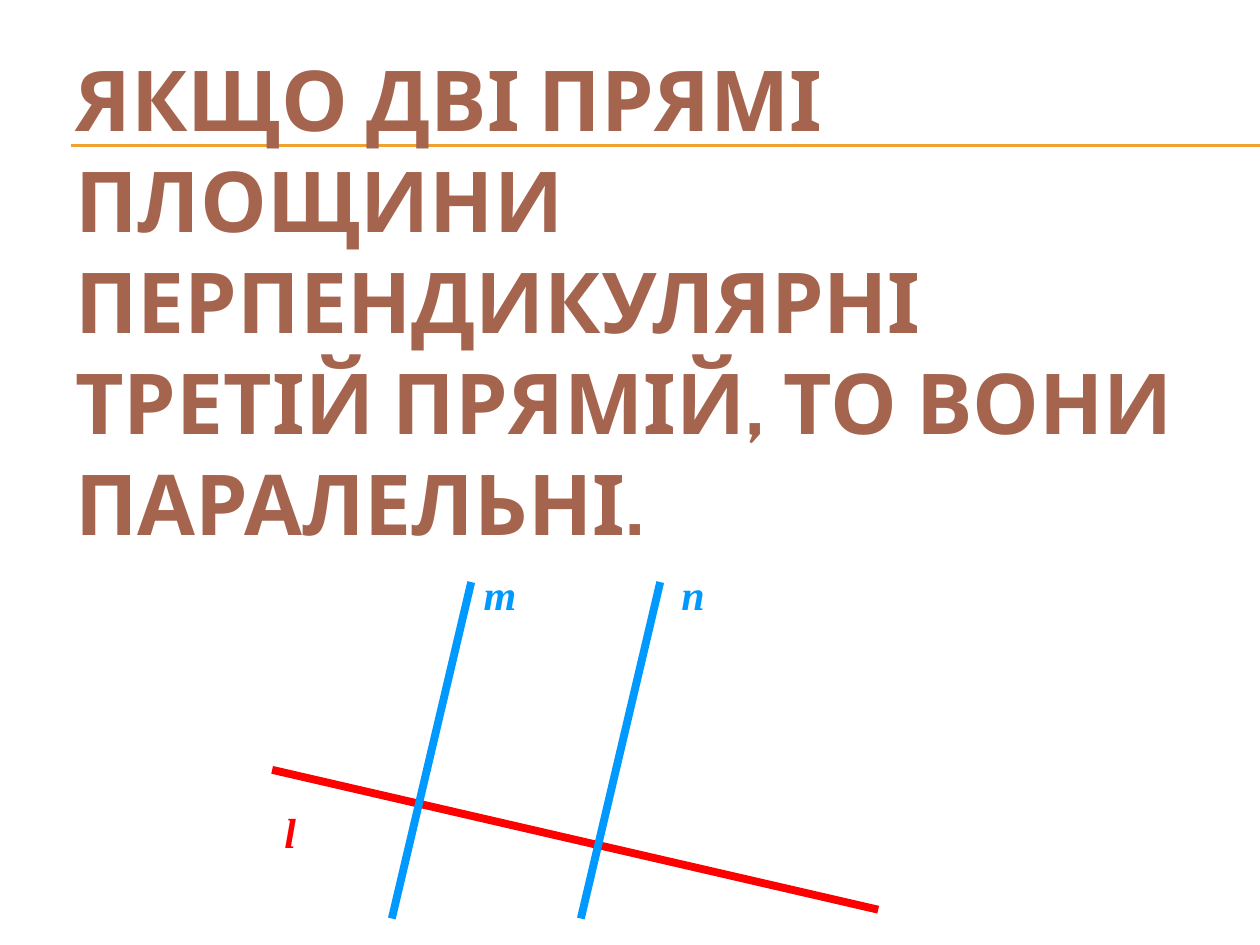
from pptx import Presentation
from pptx.dml.color import RGBColor
from pptx.enum.shapes import MSO_CONNECTOR
from pptx.enum.text import MSO_ANCHOR, MSO_AUTO_SIZE
from pptx.oxml.ns import qn
from pptx.util import Inches, Pt
from lxml.etree import SubElement

GOLD, BROWN, RED, BLUE = "F0A22E", "A5644E", "FF0000", "0099FF"


def color(hex_code):
    return RGBColor.from_string(hex_code)


class Deck:
    """Holds the style and the current slide."""

    title_font, label_font = "Cabin", "Times New Roman"

    def __init__(self):
        self.prs = Presentation()
        self.prs.slide_width, self.prs.slide_height = Inches(10), Inches(7.5)
        self.s = self.prs.slides.add_slide(self.prs.slide_layouts[6])

    def line(self, x1, y1, x2, y2, hex_code, width):
        c = self.s.shapes.add_connector(
            MSO_CONNECTOR.STRAIGHT, Inches(x1), Inches(y1), Inches(x2), Inches(y2))
        c.line.color.rgb = color(hex_code)
        c.line.width = Pt(width)
        SubElement(c._element.spPr, qn("a:effectLst"))

    def text(self, x, y, w, h, text, font, size, hex_code, italic=False):
        sp = self.s.shapes.add_textbox(Inches(x), Inches(y), Inches(w), Inches(h))
        tf = sp.text_frame
        tf.word_wrap = True
        r = tf.paragraphs[0].add_run()
        r.text = text
        r.font.name, r.font.size = font, Pt(size)
        r.font.bold, r.font.italic = True, italic
        r.font.color.rgb = color(hex_code)
        return tf

    def title(self, x, y, w, h, text):
        tf = self.text(x, y, w, h, text, self.title_font, 48, BROWN)
        tf.vertical_anchor = MSO_ANCHOR.MIDDLE

    def label(self, x, y, w, text, hex_code):
        tf = self.text(x, y, w, 0.5, text, self.label_font, 24, hex_code, italic=True)
        tf.auto_size = MSO_AUTO_SIZE.SHAPE_TO_FIT_TEXT


def main():
    deck = Deck()
    for y in (1.15, 1.16):
        deck.line(0.56, y, 10, y, GOLD, 0.75)
    deck.title(0.5, 0.3, 9, 4.16,
               "ЯКЩО ДВІ ПРЯМІ ПЛОЩИНИ ПЕРПЕНДИКУЛЯРНІ "
               "ТРЕТІЙ ПРЯМІЙ, ТО ВОНИ ПАРАЛЕЛЬНІ.")

    deck.line(2.16, 6.11, 6.97, 7.22, RED, 4.5)
    for top_x in (3.74, 5.24):
        deck.line(top_x, 4.62, top_x - 0.63, 7.29, BLUE, 4.5)

    deck.label(2.16, 6.35, 0.47, "l", RED)
    deck.label(3.74, 4.46, 0.63, "m", BLUE)
    deck.label(5.31, 4.46, 0.47, "n", BLUE)
    deck.prs.save("out.pptx")


if __name__ == "__main__":
    main()
